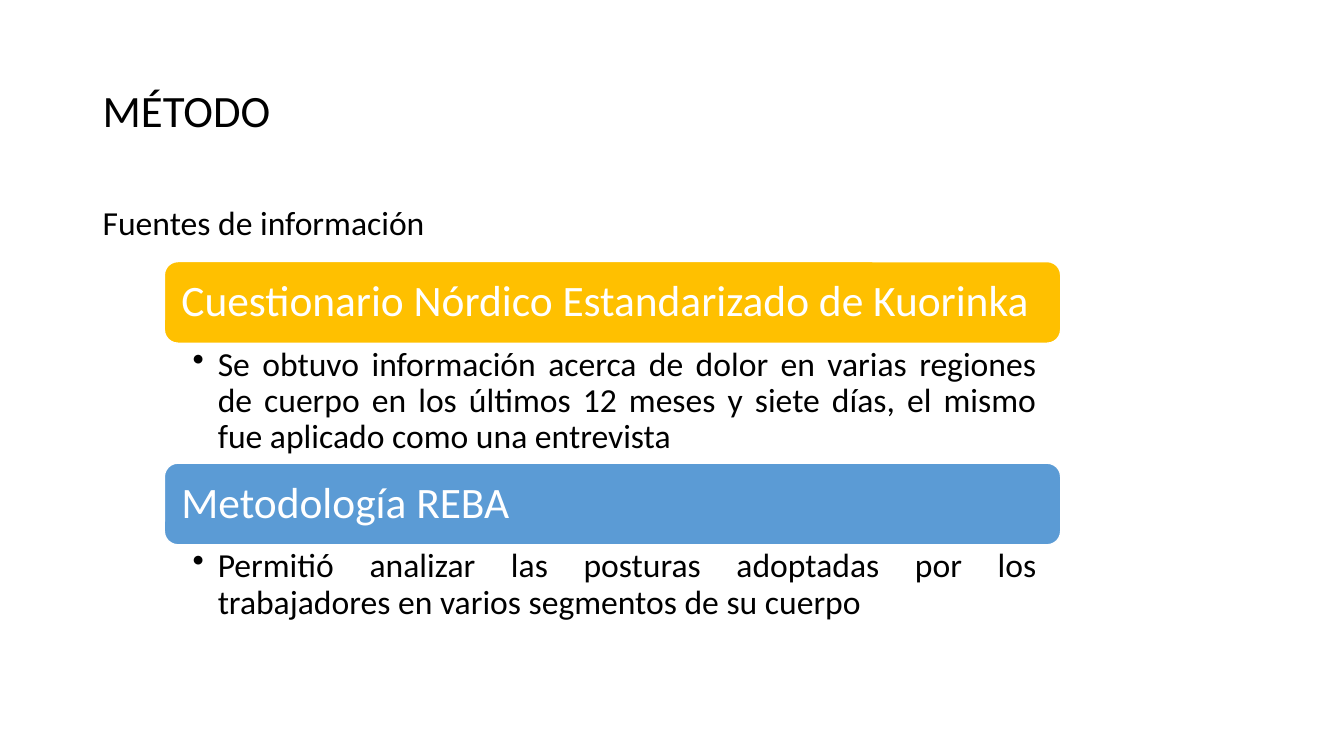
from dataclasses import dataclass

from lxml.etree import SubElement as Sub
from pptx import Presentation
from pptx.dml.color import RGBColor as Rgb
from pptx.enum.shapes import MSO_SHAPE as Shape
from pptx.enum.text import MSO_ANCHOR as Anchor, PP_ALIGN as Align
from pptx.oxml.ns import qn
from pptx.util import Inches, Pt


@dataclass(frozen=True)
class Theme:
    font: str = "Calibri"
    ink: str = "000000"
    paper: str = "FFFFFF"
    gold: str = "FFC000"
    blue: str = "5B9BD5"
    title: int = 32
    band: int = 31
    body: int = 24
    leading: float = 0.9


class Deck:
    """Draws on a grid whose columns and rows are a tenth of an inch."""

    def __init__(self, theme):
        self.theme = theme
        self.pres = Presentation()
        self.pres.slide_width = Inches(13.33)
        self.pres.slide_height = Inches(7.5)
        self.slide = self.pres.slides.add_slide(self.pres.slide_layouts[6])

    def place(self, *cells):
        return [Inches(cell / 10) for cell in cells]

    def letter(self, shape, text, size, color, pads, anchor=Anchor.TOP):
        """Put one styled paragraph in a shape and return it."""
        frame = shape.text_frame
        frame.word_wrap = True
        frame.vertical_anchor = anchor
        (frame.margin_left, frame.margin_top,
         frame.margin_right, frame.margin_bottom) = self.place(*pads)
        para = frame.paragraphs[0]
        para.text = text
        para.alignment = Align.LEFT
        para.line_spacing = self.theme.leading
        font = para.font
        font.name, font.size = self.theme.font, Pt(size)
        font.color.rgb = Rgb.from_string(color)
        return para

    def label(self, box, text, size, pads=(1, 0.5, 1, 0.5), anchor=Anchor.TOP):
        shape = self.slide.shapes.add_textbox(*self.place(*box))
        return self.letter(shape, text, size, self.theme.ink, pads, anchor)

    def band(self, box, text, fill):
        shape = self.slide.shapes.add_shape(
            Shape.ROUNDED_RECTANGLE, *self.place(*box))
        shape.shadow.inherit = False
        shape.fill.solid()
        shape.fill.fore_color.rgb = Rgb.from_string(fill)
        shape.line.color.rgb = Rgb.from_string(self.theme.paper)
        shape.line.width = Pt(1)
        self.letter(shape, text, self.theme.band, self.theme.paper,
                    (1.3,) * 4, Anchor.MIDDLE)

    def bullet(self, box, text):
        para = self.label(box, text, self.theme.body, (2.8, 0.4, 2.4, 0.4))
        para.alignment = Align.JUSTIFY
        props = para._p.get_or_add_pPr()
        hang = Inches(0.25)
        props.set("marL", str(hang))
        props.set("indent", str(-hang))
        mark = Sub(props, qn("a:buChar"), char="•")
        props.find(qn("a:defRPr")).addprevious(mark)


def main():
    theme = Theme()
    deck = Deck(theme)
    deck.label((9.2, 4, 115, 14.5), "MÉTODO", theme.title,
               anchor=Anchor.MIDDLE)
    deck.label((9.2, 20, 115, 47.6), "Fuentes de información", theme.body)

    sources = [
        ("Cuestionario Nórdico Estandarizado de Kuorinka", theme.gold, 11.9,
         "Se obtuvo información acerca de dolor en varias regiones de cuerpo "
         "en los últimos 12 meses y siete días, el mismo fue aplicado como "
         "una entrevista"),
        ("Metodología REBA", theme.blue, 8.2,
         "Permitió analizar las posturas adoptadas por los trabajadores en "
         "varios segmentos de su cuerpo"),
    ]
    left, top, wide, high = 16.3, 25.95, 88.9, 8.1
    for name, fill, depth, detail in sources:
        deck.band((left, top, wide, high), name, fill)
        deck.bullet((left, top + high, wide, depth), detail)
        top += high + depth

    deck.pres.save("out.pptx")


if __name__ == "__main__":
    main()
